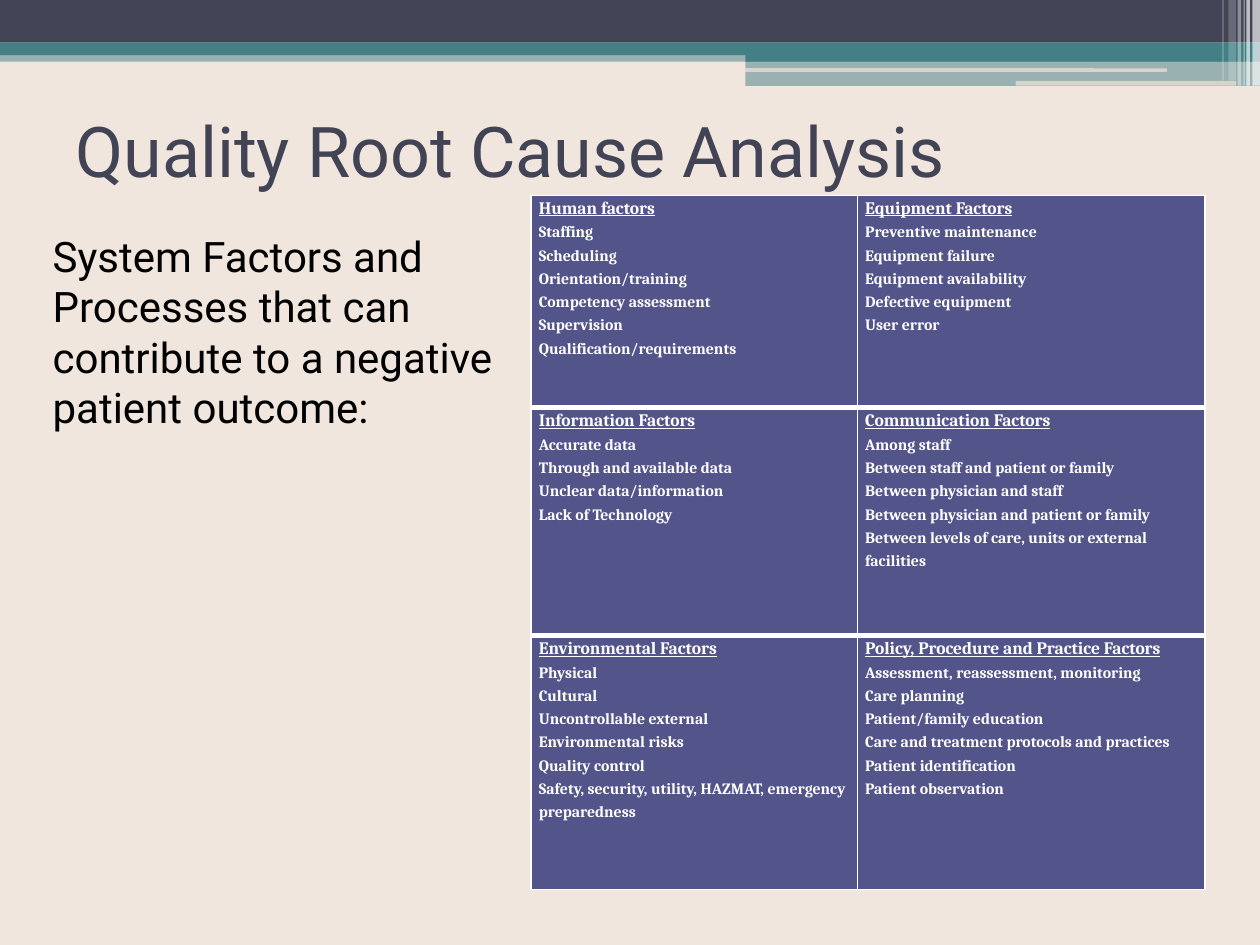
from lxml import etree
from pptx import Presentation
from pptx.dml.color import RGBColor
from pptx.enum.shapes import MSO_SHAPE
from pptx.enum.text import MSO_ANCHOR
from pptx.oxml.ns import qn
from pptx.util import Pt

RECTANGLE = MSO_SHAPE.RECTANGLE
ROUNDED = MSO_SHAPE.ROUNDED_RECTANGLE
TOP, MIDDLE = MSO_ANCHOR.TOP, MSO_ANCHOR.MIDDLE

BACKGROUND = RGBColor(0xF0, 0xE6, 0xDE)
SAND = RGBColor(0xEC, 0xDE, 0xD4)
SLATE = RGBColor(0x42, 0x44, 0x56)
TEAL = RGBColor(0x43, 0x80, 0x86)
INDIGO = RGBColor(0x53, 0x54, 0x8A)
WHITE = RGBColor(0xFF, 0xFF, 0xFF)
BLACK = RGBColor(0, 0, 0)

presentation = Presentation()
presentation.slide_width, presentation.slide_height = Pt(720), Pt(540)
slide = presentation.slides.add_slide(presentation.slide_layouts[6])
slide.background.fill.solid()
slide.background.fill.fore_color.rgb = BACKGROUND

# Header bands and stripes: kind, left, top, width, height, colour, opacity in percent
bands = [
    (RECTANGLE, 0, 28.8, 720, 6.5, TEAL, 50),
    (RECTANGLE, 0, 0, 720, 24.4, SLATE, 100),
    (RECTANGLE, 0, 24.4, 720, 7.2, TEAL, 100),
    (RECTANGLE, 426, 28, 294, 7.2, TEAL, 100),
    (RECTANGLE, 426, 34.7, 294, 14.4, TEAL, 50),
    (ROUNDED, 425.6, 39, 241.2, 2, SAND, 77),
    (ROUNDED, 580.4, 46.2, 126, 2.7, SAND, 77),
    (RECTANGLE, 715.6, 0, 4.4, 49, WHITE, 65),
    (RECTANGLE, 712.2, 0, 2, 49, WHITE, 65),
    (RECTANGLE, 710.6, 0, 0.7, 49, WHITE, 60),
    (RECTANGLE, 707.2, 0, 2, 49, WHITE, 40),
    (RECTANGLE, 702, 0, 4.3, 46, WHITE, 20),
    (RECTANGLE, 698.5, 0, 0.7, 46, WHITE, 30),
]
for kind, left, top, width, height, color, opacity in bands:
    band = slide.shapes.add_shape(kind, Pt(left), Pt(top), Pt(width), Pt(height))
    band.shadow.inherit = False
    band.line.fill.background()
    band.fill.solid()
    band.fill.fore_color.rgb = color
    if opacity < 100:
        color_element = band.fill._xPr.find(qn("a:solidFill"))[0]
        etree.SubElement(color_element, qn("a:alpha"), val=str(opacity * 1000))

# Title and introduction: text, left, top, width, height, size, colour, anchor, indent
texts = [
    ("Quality Root Cause Analysis", 36, 43.2, 648, 84.2, 40, SLATE, MIDDLE, 0),
    ("System Factors and Processes that can contribute to a negative patient outcome:",
     14.4, 128.2, 318.2, 356.4, 24, BLACK, TOP, 8.6),
]
for text, left, top, width, height, size, color, anchor, indent in texts:
    box = slide.shapes.add_textbox(Pt(left), Pt(top), Pt(width), Pt(height))
    box.text_frame.word_wrap = True
    box.text_frame.vertical_anchor = anchor
    box.text_frame.text = text
    paragraph = box.text_frame.paragraphs[0]
    paragraph._p.get_or_add_pPr().set("marL", str(Pt(indent)))
    paragraph.font.name = "Roboto"
    paragraph.font.size = Pt(size)
    paragraph.font.color.rgb = color

# Factor table: the first line of each cell is its heading
factors = [
    [["Human factors", "Staffing", "Scheduling", "Orientation/training",
      "Competency assessment", "Supervision", "Qualification/requirements"],
     ["Equipment Factors", "Preventive maintenance", "Equipment failure",
      "Equipment availability", "Defective equipment", "User error"]],
    [["Information Factors", "Accurate data", "Through and available data",
      "Unclear data/information", "Lack of Technology"],
     ["Communication Factors", "Among staff", "Between staff and patient or family",
      "Between physician and staff", "Between physician and patient or family",
      "Between levels of care, units or external facilities"]],
    [["Environmental Factors", "Physical", "Cultural", "Uncontrollable external",
      "Environmental risks", "Quality control",
      "Safety, security, utility, HAZMAT, emergency preparedness"],
     ["Policy, Procedure and Practice Factors", "Assessment, reassessment, monitoring",
      "Care planning", "Patient/family education",
      "Care and treatment protocols and practices", "Patient identification",
      "Patient observation"]],
]
column_widths = [186.5, 198.7]
row_heights = [121.4, 130.2, 145.2]
table = slide.shapes.add_table(
    3, 2, Pt(303.4), Pt(111.6), Pt(sum(column_widths)), Pt(sum(row_heights))).table
table.first_row = table.horz_banding = False
for column, width in zip(table.columns, column_widths):
    column.width = Pt(width)
for row, height in zip(table.rows, row_heights):
    row.height = Pt(height)

for row_index, row_factors in enumerate(factors):
    for column_index, lines in enumerate(row_factors):
        cell = table.cell(row_index, column_index)
        cell.margin_left = cell.margin_right = cell.margin_top = cell.margin_bottom = 0
        cell.fill.solid()
        cell.fill.fore_color.rgb = INDIGO

        # White borders, thicker between rows
        top_width = 3 if row_index > 0 else 1
        bottom_width = 3 if row_index < len(factors) - 1 else 1
        properties = cell._tc.get_or_add_tcPr()
        borders = [("L", 1), ("R", 1), ("T", top_width), ("B", bottom_width)]
        for position, (side, width) in enumerate(borders):
            border = etree.Element(qn("a:ln" + side), w=str(Pt(width)))
            fill = etree.SubElement(border, qn("a:solidFill"))
            etree.SubElement(fill, qn("a:srgbClr"), val=str(WHITE))
            properties.insert(position, border)

        cell.text_frame.text = "\n".join(lines)
        for line_index, paragraph in enumerate(cell.text_frame.paragraphs):
            is_heading = line_index == 0
            paragraph._p.get_or_add_pPr().set("marL", str(Pt(4.5)))
            paragraph.line_spacing = Pt(13.3)
            font = paragraph.runs[0].font
            font.name = "Cambria"
            font.size = Pt(10 if is_heading else 9)
            font.bold = True
            font.underline = is_heading
            font.color.rgb = WHITE

presentation.save("out.pptx")
